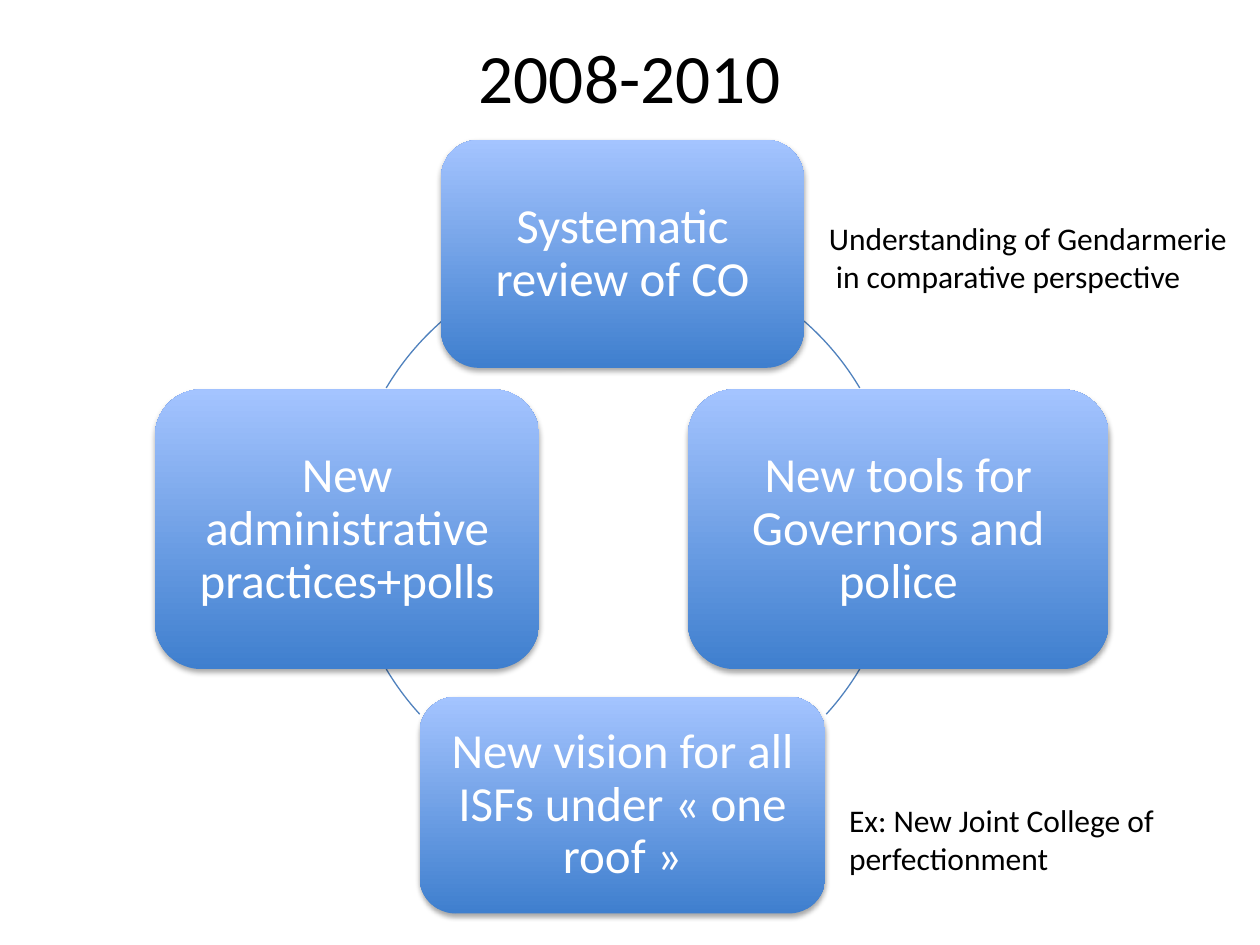
from typing import NamedTuple

from lxml import etree
from pptx import Presentation
from pptx import util as u
from pptx.dml.color import RGBColor
from pptx.enum import shapes, text
from pptx.oxml.ns import qn

FONT = "Calibri"
COLORS = {
    "text": "000000",
    "box_text": "FFFFFF",
    "box_top": "A4C4FF",
    "box_bottom": "3F7FCE",
    "ring": "4F81BD",
    "shadow": "000000",
}
RING_LEFT, RING_TOP, RING_SIZE = 2.76, 2.01, 4.37


class Box(NamedTuple):
    label: str
    left: float
    top: float
    width: float
    height: float


class Arc(NamedTuple):
    """Part of the ring, in degrees clockwise from three o'clock."""
    start: float
    end: float


class Note(NamedTuple):
    lines: list[str]
    left: float
    top: float
    width: float
    height: float


BOXES = [
    Box("Systematic review of CO", 3.5, 1.11, 2.88, 1.81),
    Box("New tools for Governors and police", 5.46, 3.09, 3.34, 2.22),
    Box("New vision for all ISFs under « one roof »", 3.33, 5.53, 3.22, 1.72),
    Box("New administrative practices+polls", 1.23, 3.09, 3.05, 2.22),
]
RIGHT_ARCS = [Arc(311.1, 329.3), Arc(30.7, 42.4)]
LEFT_ARCS = [Arc((540 - arc.end) % 360, (540 - arc.start) % 360) for arc in RIGHT_ARCS]
NOTES = [
    Note(["Ex: New Joint College of", "perfectionment"], 6.64, 6.31, 2.66, 0.71),
    Note(["Understanding of Gendarmerie", " in comparative perspective"],
         6.48, 1.69, 3.4, 0.71),
]


def rgb(name: str) -> RGBColor:
    return RGBColor.from_string(COLORS[name])


def add_run(paragraph, content: str, size: float, color: str) -> None:
    run = paragraph.add_run()
    run.text = content
    run.font.name = FONT
    run.font.size = u.Pt(size)
    run.font.color.rgb = rgb(color)


def add_soft_shadow(shape) -> None:
    shape.shadow.inherit = False
    effects = shape._element.spPr.find(qn("a:effectLst"))
    shadow = etree.SubElement(
        effects, qn("a:outerShdw"), blurRad=str(u.Pt(3.1)), dist=str(u.Pt(1.8)),
        dir="5400000", rotWithShape="0")
    color = etree.SubElement(shadow, qn("a:srgbClr"), val=COLORS["shadow"])
    etree.SubElement(color, qn("a:alpha"), val="35000")


def add_title(slide, content: str) -> None:
    title = slide.shapes.add_textbox(
        u.Inches(0.5), u.Inches(0.19), u.Inches(9), u.Inches(0.83))
    frame = title.text_frame
    frame.word_wrap = True
    frame.vertical_anchor = text.MSO_ANCHOR.MIDDLE
    paragraph = frame.paragraphs[0]
    paragraph.alignment = text.PP_ALIGN.CENTER
    add_run(paragraph, content, 39.6, "text")


def add_arc(slide, arc: Arc) -> None:
    shape = slide.shapes.add_shape(
        shapes.MSO_SHAPE.ARC, u.Inches(RING_LEFT), u.Inches(RING_TOP),
        u.Inches(RING_SIZE), u.Inches(RING_SIZE))
    # Angles are stored in 1/60000 degree and adjustments are scaled by 100000.
    shape.adjustments[0] = arc.start * 0.6
    shape.adjustments[1] = arc.end * 0.6
    shape.shadow.inherit = False
    shape.fill.background()
    shape.line.color.rgb = rgb("ring")
    shape.line.width = u.Pt(0.75)


def add_box(slide, box: Box) -> None:
    shape = slide.shapes.add_shape(
        shapes.MSO_SHAPE.ROUNDED_RECTANGLE, u.Inches(box.left), u.Inches(box.top),
        u.Inches(box.width), u.Inches(box.height))
    shape.line.fill.background()
    shape.fill.gradient()
    shape.fill.gradient_angle = 90
    for stop, position, color in zip(
            shape.fill.gradient_stops, (0, 1), ("box_bottom", "box_top")):
        stop.position = position
        stop.color.rgb = rgb(color)
    add_soft_shadow(shape)

    frame = shape.text_frame
    frame.word_wrap = True
    frame.vertical_anchor = text.MSO_ANCHOR.MIDDLE
    frame.margin_left = frame.margin_right = u.Inches(0.12)
    frame.margin_top = frame.margin_bottom = u.Inches(0.12)
    paragraph = frame.paragraphs[0]
    paragraph.alignment = text.PP_ALIGN.CENTER
    paragraph.line_spacing = 0.9
    add_run(paragraph, box.label, 28, "box_text")


def add_note(slide, note: Note) -> None:
    shape = slide.shapes.add_textbox(
        u.Inches(note.left), u.Inches(note.top),
        u.Inches(note.width), u.Inches(note.height))
    frame = shape.text_frame
    frame.word_wrap = False
    frame.auto_size = text.MSO_AUTO_SIZE.SHAPE_TO_FIT_TEXT
    for index, line in enumerate(note.lines):
        paragraph = frame.add_paragraph() if index else frame.paragraphs[0]
        add_run(paragraph, line, 18, "text")


def main() -> None:
    presentation = Presentation()
    presentation.slide_width = u.Inches(10)
    presentation.slide_height = u.Inches(7.5)
    slide = presentation.slides.add_slide(presentation.slide_layouts[6])
    add_title(slide, "2008-2010")
    for arc in RIGHT_ARCS + LEFT_ARCS:
        add_arc(slide, arc)
    for box in BOXES:
        add_box(slide, box)
    for note in NOTES:
        add_note(slide, note)
    presentation.save("out.pptx")


if __name__ == "__main__":
    main()
